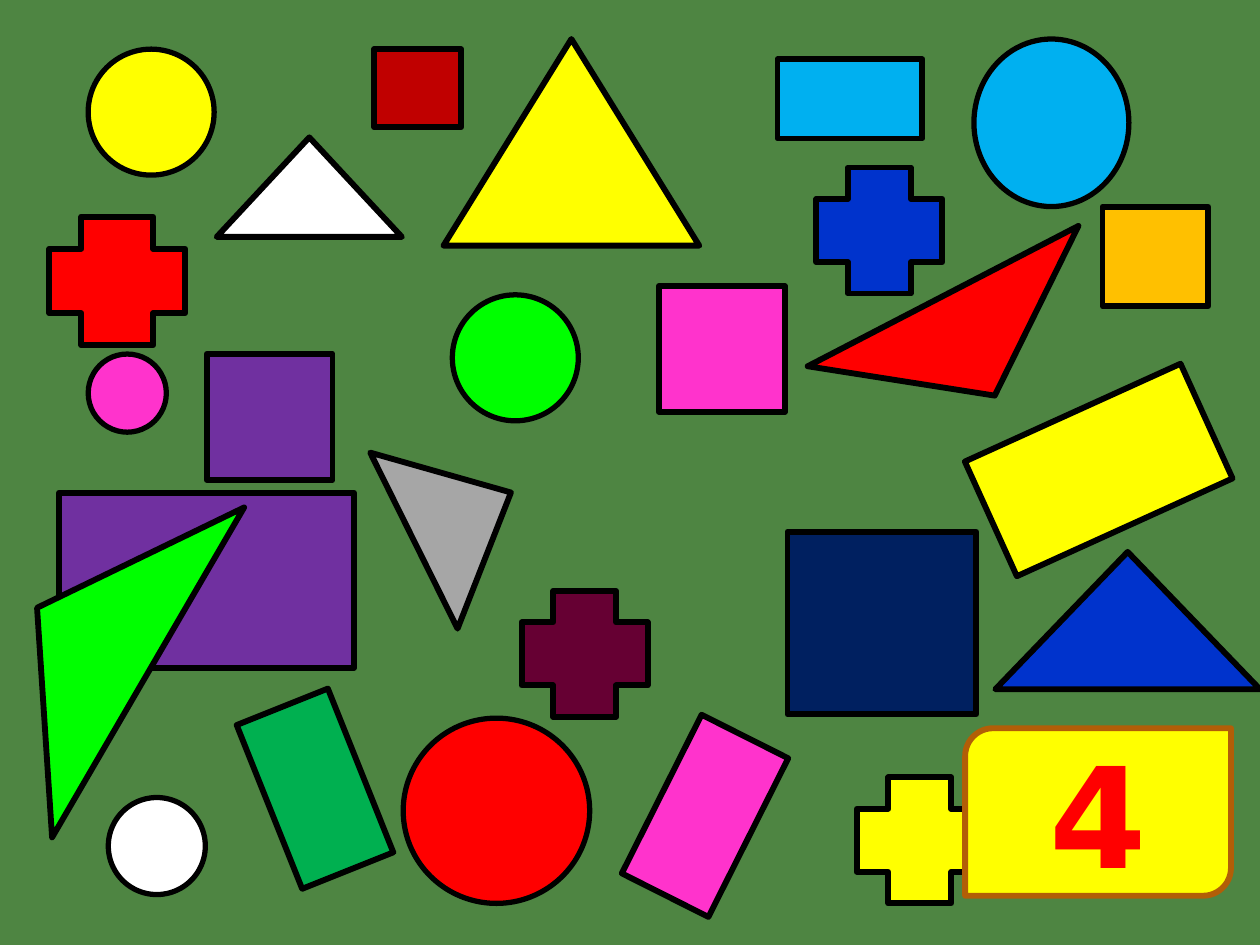
from lxml import etree
from pptx import Presentation, util as u
from pptx.dml.color import RGBColor
from pptx.enum import shapes, text
from pptx.oxml.ns import qn

KIND = shapes.MSO_SHAPE
BOARD, OUTLINE, BADGE_EDGE = "4E8542", "000000", "B25E07"
YELLOW, RED, PINK, WHITE = "FFFF00", "FF0000", "FF33CC", "FFFFFF"
LIME, SKY, BLUE, PURPLE = "00FF00", "00B0F0", "0033CC", "7030A0"
AMBER, NAVY, CRIMSON, GREEN = "FFC000", "002060", "C00000", "00B050"
GREY, MAROON = "A6A6A6", "660033"

# Each figure: left, top, width, height in inches, colour, optional rotation
CIRCLES = [
    (0.7, 0.39, 1, 1, YELLOW),
    (0.7, 2.81, 0.62, 0.62, PINK),
    (0.86, 6.33, 0.77, 0.77, WHITE),
    (3.59, 2.34, 1, 1, LIME),
    (7.73, 0.31, 1.23, 1.33, SKY),
    (3.2, 5.7, 1.48, 1.47, RED),
]
RECTANGLES = [
    (1.64, 2.81, 1, 1, PURPLE),
    (5.23, 2.27, 1, 1, PINK),
    (8.75, 1.64, 0.84, 0.79, AMBER),
    (6.25, 4.22, 1.5, 1.45, NAVY),
    (2.97, 0.39, 0.69, 0.62, CRIMSON),
    (0.47, 3.91, 2.34, 1.39, PURPLE),
    (1.8, 5.87, 1.4, 0.78, GREEN, 68.2),
    (6.17, 0.47, 1.15, 0.63, SKY),
    (7.78, 3.23, 1.88, 1, YELLOW, 335.6),
    (4.89, 6.09, 1.41, 0.77, PINK, 116.7),
]
TRIANGLES = [
    (6.48, 2.3, 2.42, 0.89, RED, 152.6),
    (-0.78, 4.57, 3.03, 1.02, LIME, 300.2),
    (1.72, 1.09, 1.47, 0.79, WHITE),
    (2.89, 3.67, 1.56, 0.86, GREY, 63.6),
    (7.9, 4.38, 2.1, 1.09, BLUE),
    (3.52, 0.31, 2.03, 1.64, YELLOW),
]
CROSSES = [
    (0.39, 1.72, 1.08, 1.02, RED),
    (6.8, 6.17, 1, 1, YELLOW),
    (4.14, 4.69, 1, 1, MAROON),
    (6.48, 1.33, 1, 1, BLUE),
]


def colour(hex_code):
    return RGBColor.from_string(hex_code)


def add_figure(slide, kind, left, top, width, height, fill, rotation=0,
               edge=OUTLINE, weight=3.35):
    figure = slide.shapes.add_shape(
        kind, *(u.Inches(n) for n in (left, top, width, height)))
    figure.rotation = rotation
    figure.shadow.inherit = False
    figure.fill.solid()
    figure.fill.fore_color.rgb = colour(fill)
    figure.line.color.rgb = colour(edge)
    figure.line.width = u.Pt(weight)
    etree.SubElement(figure.line._get_or_add_ln(), qn("a:round"))
    return figure


def add_count_badge(slide, count):
    badge = add_figure(slide, KIND.ROUND_2_DIAG_RECTANGLE,
                       7.66, 5.78, 2.11, 1.33, YELLOW, edge=BADGE_EDGE)
    badge.text_frame.vertical_anchor = text.MSO_ANCHOR.MIDDLE
    paragraph = badge.text_frame.paragraphs[0]
    paragraph.alignment = text.PP_ALIGN.CENTER
    digit = paragraph.add_run()
    digit.text = count
    digit.font.name = "DejaVu Sans"
    digit.font.size = u.Pt(80)
    digit.font.bold = True
    digit.font.color.rgb = colour(RED)


def main():
    deck = Presentation()
    deck.slide_width, deck.slide_height = u.Inches(10), u.Inches(7.5)
    slide = deck.slides.add_slide(deck.slide_layouts[6])
    slide.background.fill.solid()
    slide.background.fill.fore_color.rgb = colour(BOARD)

    for kind, figures, weight in (
        (KIND.OVAL, CIRCLES, 3),
        (KIND.RECTANGLE, RECTANGLES, 3.35),
        (KIND.ISOSCELES_TRIANGLE, TRIANGLES, 3.35),
        (KIND.CROSS, CROSSES, 3.35),
    ):
        for figure in figures:
            add_figure(slide, kind, *figure, weight=weight)
    add_count_badge(slide, "4")
    deck.save("out.pptx")


if __name__ == "__main__":
    main()
